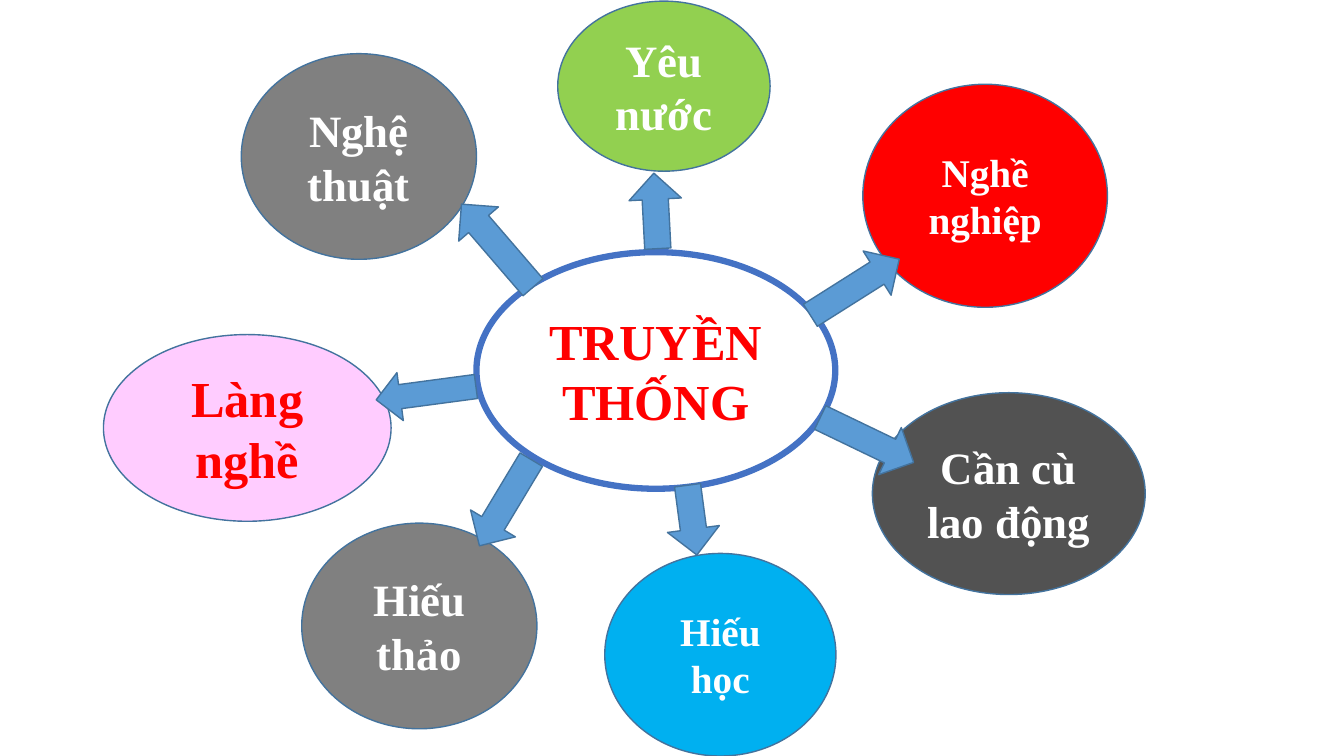
import pptx
import pptx.dml.color
import pptx.enum.shapes
import pptx.enum.text
import pptx.util

COLORS = {
    "white": "FFFFFF", "red": "FF0000", "charcoal": "525252", "sky": "00B0F0",
    "gray": "808080", "green": "92D050", "pink": "FFCCFF",
    "arrow": "5B9BD5", "outline": "43739E", "hub outline": "4472C4",
}
FONT = "Times New Roman"

# Positions are centres; all lengths are percentages of the slide's width or height.
# text, (centre x, centre y, width, height), fill, text colour, text size
HUB = ("TRUYỀN THỐNG", (48.8, 49, 26.7, 31.3), "white", "red", 36)
TRADITIONS = [
    ("Nghề nghiệp", (73.3, 25.9, 18.2, 29.5), "red", "white", 28),
    ("Cần cù lao động", (75.06, 65.3, 20.3, 26.7), "charcoal", "white", 32),
    ("Hiếu học", (53.6, 86.6, 17.2, 26.8), "sky", "white", 28),
    ("Hiếu thảo", (31.2, 82.8, 17.5, 27.2), "gray", "white", 32),
    ("Yêu nước", (49.4, 11.4, 15.8, 22.5), "green", "white", 32),
    ("Làng nghề", (18.4, 56.6, 21.4, 24.7), "pink", "red", 36),
    ("Nghệ thuật", (26.7, 20.7, 17.5, 27.2), "gray", "white", 32),
]
# (centre x, centre y, width, length), clockwise angle from upright
ARROWS = [
    ((48.8, 27.9, 3.9, 10), 357),
    ((63.6, 38, 3.9, 13.9), 57.7),
    ((64.5, 58.2, 3.9, 13.7), 115.7),
    ((51.5, 68.8, 3.9, 9.3), 172.4),
    ((37.6, 66.5, 3.9, 13.3), 211),
    ((31.7, 52, 3.6, 13.3), 262.4),
    ((37, 32.5, 3.9, 14.5), 319.3),
]

deck = pptx.Presentation()
deck.slide_width = pptx.util.Inches(13.33)
deck.slide_height = pptx.util.Inches(7.5)
slide = deck.slides.add_slide(deck.slide_layouts[6])


def color(name):
    return pptx.dml.color.RGBColor.from_string(COLORS[name])


def add_centred(kind, box, fill, outline="outline", outline_width=1):
    """Add a filled preset shape around the centre given in box."""
    x, y, width, height = box
    across, down = deck.slide_width / 100, deck.slide_height / 100
    shape = slide.shapes.add_shape(
        kind, round((x - width / 2) * across), round((y - height / 2) * down),
        round(width * across), round(height * down))
    shape.shadow.inherit = False
    shape.fill.solid()
    shape.fill.fore_color.rgb = color(fill)
    shape.line.color.rgb = color(outline)
    shape.line.width = pptx.util.Pt(outline_width)
    return shape


def add_bubble(text, box, fill, text_color, size, **outline):
    bubble = add_centred(pptx.enum.shapes.MSO_SHAPE.OVAL, box, fill, **outline)
    frame = bubble.text_frame
    frame.word_wrap = True
    frame.vertical_anchor = pptx.enum.text.MSO_ANCHOR.MIDDLE
    paragraph = frame.paragraphs[0]
    paragraph.text = text
    paragraph.alignment = pptx.enum.text.PP_ALIGN.CENTER
    paragraph.font.name = FONT
    paragraph.font.size = pptx.util.Pt(size)
    paragraph.font.bold = True
    paragraph.font.color.rgb = color(text_color)


add_bubble(*HUB, outline="hub outline", outline_width=4.5)
for tradition in TRADITIONS:
    add_bubble(*tradition)
for box, angle in ARROWS:
    arrow = add_centred(pptx.enum.shapes.MSO_SHAPE.UP_ARROW, box, "arrow")
    arrow.rotation = angle

deck.save("out.pptx")
